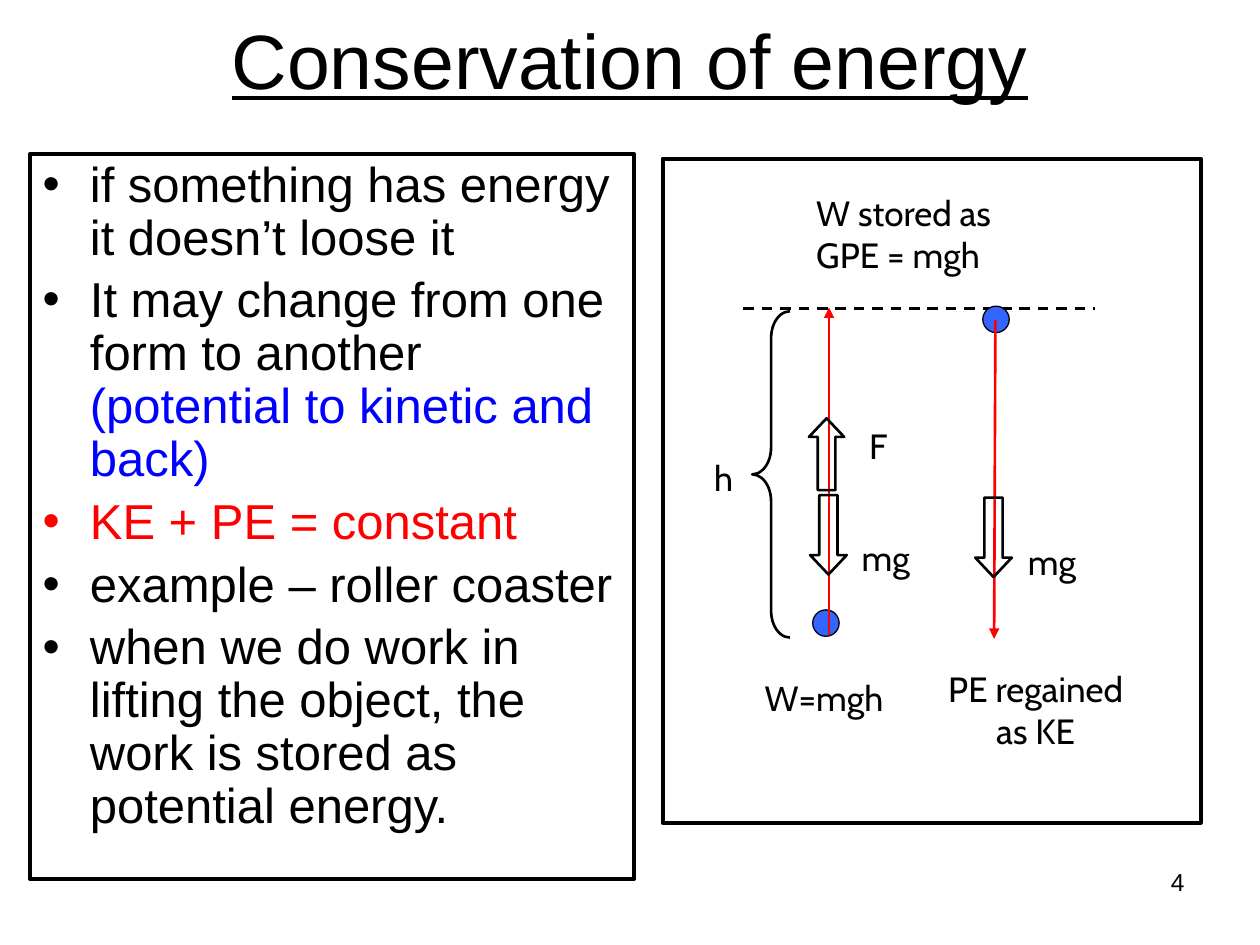
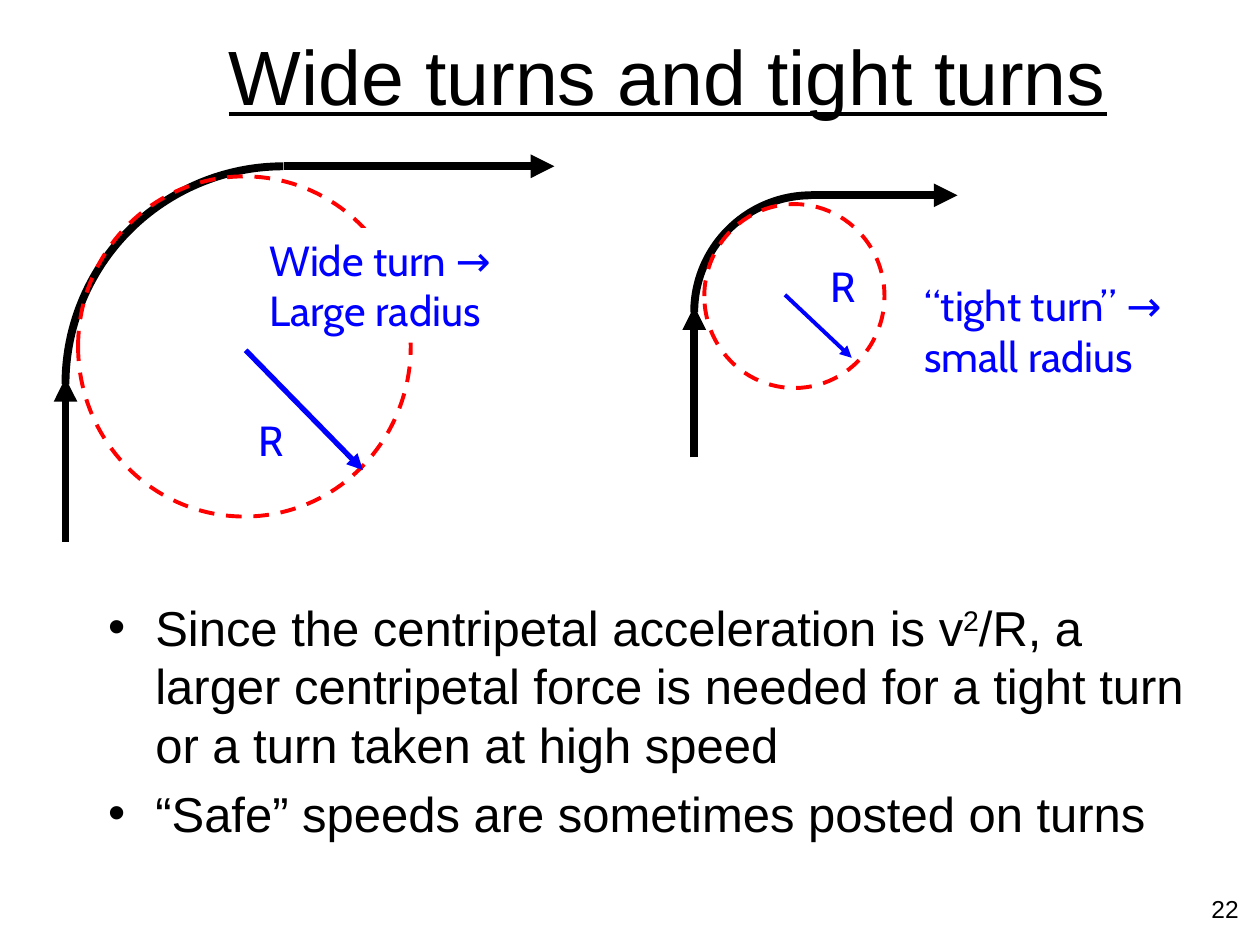
import dataclasses

import lxml.etree
import pptx
import pptx.dml.color
import pptx.enum.dml
import pptx.enum.shapes
import pptx.enum.text
import pptx.oxml.ns
import pptx.util

SHAPE = pptx.enum.shapes.MSO_SHAPE
ALIGN = pptx.enum.text.PP_ALIGN
COLUMNS, ROWS = 100, 75


@dataclasses.dataclass(frozen=True)
class Theme:
    black: str = "000000"
    white: str = "FFFFFF"
    blue: str = "0000FF"
    red: str = "FF0000"
    ball: str = "3366FF"
    main_font: str = "Arial"
    label_font: str = "Cabin"
    title_size: int = 44
    body_size: int = 28
    turn_size: int = 24
    label_size: int = 20
    number_size: int = 14
    frame_width: float = 2.25
    thin_width: float = 1.5
    ball_width: float = 0.75
    road_width: float = 4.5


THEME = Theme()


def add_xml(parent, tag, **attributes):
    return lxml.etree.SubElement(parent, pptx.oxml.ns.qn(tag), **attributes)


class SlideBuilder:
    """Draws on the current slide; places are columns and rows of the grid."""

    def __init__(self, deck, theme):
        self.deck = deck
        self.theme = theme
        self.column = deck.slide_width / COLUMNS
        self.row = deck.slide_height / ROWS
        self.slide = None

    def new_slide(self):
        self.slide = self.deck.slides.add_slide(self.deck.slide_layouts[6])

    def place(self, *lengths):
        """Turn alternating columns and rows into slide lengths."""
        units = (self.column, self.row) * 2
        return [round(length * unit) for length, unit in zip(lengths, units)]

    def color(self, value):
        return pptx.dml.color.RGBColor.from_string(value)

    def style_line(self, line, color, width, dashed=False):
        line.color.rgb = self.color(color)
        line.width = pptx.util.Pt(width)
        if dashed:
            line.dash_style = pptx.enum.dml.MSO_LINE.DASH

    def style_span(self, span, size, font, color):
        span.font.size = pptx.util.Pt(size)
        span.font.name = font
        span.font.color.rgb = self.color(color)

    def text(self, area, words, size, font, color=None, align=ALIGN.LEFT, wrap=True, fill=None):
        box = self.slide.shapes.add_textbox(*self.place(*area))
        frame = box.text_frame
        frame.word_wrap = wrap
        frame.text = words
        if fill:
            box.fill.solid()
            box.fill.fore_color.rgb = self.color(fill)
        for para in frame.paragraphs:
            para.alignment = align
            for span in para.runs:
                self.style_span(span, size, font, color or self.theme.black)
        return box

    def title(self, area, words):
        box = self.text(area, words, self.theme.title_size, self.theme.main_font, align=ALIGN.CENTER)
        box.text_frame.vertical_anchor = pptx.enum.text.MSO_ANCHOR.MIDDLE
        box.text_frame.paragraphs[0].runs[0].font.underline = True

    def number(self, area, words):
        self.text(area, words, self.theme.number_size, self.theme.main_font, align=ALIGN.RIGHT)

    def label(self, area, words, align=ALIGN.LEFT):
        self.text(area, words, self.theme.label_size, self.theme.label_font, align=align, wrap=False)

    def turn_label(self, area, words, fill=None):
        self.text(area, words, self.theme.turn_size, self.theme.label_font, self.theme.blue, fill=fill)

    def bullets(self, area, items, spacing=1.0, framed=False):
        """Each item is a list of (words, color, baseline in thousandths of a percent)."""
        theme = self.theme
        box = self.slide.shapes.add_textbox(*self.place(*area))
        if framed:
            self.style_line(box.line, theme.black, theme.frame_width)
        frame = box.text_frame
        frame.word_wrap = True
        for index, spans in enumerate(items):
            para = frame.add_paragraph() if index else frame.paragraphs[0]
            para.line_spacing = spacing
            para.space_before = pptx.util.Pt(0.2 * theme.body_size)
            properties = para._p.get_or_add_pPr()
            indent = round(3.75 * self.column)
            properties.set("marL", str(indent))
            properties.set("indent", str(-indent))
            add_xml(properties, "a:buFont", typeface=theme.main_font)
            add_xml(properties, "a:buChar", char="•")
            for words, color, baseline in spans:
                span = para.add_run()
                span.text = words
                self.style_span(span, theme.body_size, theme.main_font, color)
                if baseline:
                    span.font._element.set("baseline", str(baseline))

    def shape(self, kind, area, color, width, fill=None, dashed=False, adjustments=()):
        shape = self.slide.shapes.add_shape(kind, *self.place(*area))
        shape.shadow.inherit = False
        if fill:
            shape.fill.solid()
            shape.fill.fore_color.rgb = self.color(fill)
        else:
            shape.fill.background()
        self.style_line(shape.line, color, width, dashed)
        for index, value in enumerate(adjustments):
            shape.adjustments[index] = value

    def ball(self, left, top):
        self.shape(SHAPE.OVAL, (left, top, 2.1, 2.1), self.theme.black,
                   self.theme.ball_width, fill=self.theme.ball)

    def force(self, kind, area):
        self.shape(kind, area, self.theme.black, self.theme.thin_width, adjustments=(0.5, 0.53))

    def line(self, start, end, color, width, arrow=True, dashed=False):
        line = self.slide.shapes.add_connector(
            pptx.enum.shapes.MSO_CONNECTOR.STRAIGHT, *self.place(*start, *end))
        self.style_line(line.line, color, width, dashed)
        if arrow:
            add_xml(line.line._get_or_add_ln(), "a:tailEnd", type="triangle")
        add_xml(line._element.spPr, "a:effectLst")

    def road(self, left, top, radius, entry, leave):
        """Draw a road that comes up from row entry and bends right to column leave."""
        black, width = self.theme.black, self.theme.road_width
        half_turn, three_quarters = 108, 162
        self.shape(SHAPE.ARC, (left, top, 2 * radius, 2 * radius), black, width,
                   adjustments=(half_turn, three_quarters))
        self.line((left, entry), (left, top + radius - 0.5), black, width)
        self.line((left + radius, top), (leave, top), black, width)

    def turning_circle(self, area, center, rim, radius_width):
        self.shape(SHAPE.OVAL, area, self.theme.red, self.theme.frame_width, dashed=True)
        self.line(center, rim, self.theme.blue, radius_width)


def build_energy_slide(page):
    theme = page.theme
    black, red, thin = theme.black, theme.red, theme.thin_width
    page.new_slide()
    page.title((0, 0, 100, 9.4), "Conservation of energy")
    page.bullets((2.4, 12.2, 47.9, 57.6), [
        [("if something has energy it doesn’t loose it", black, 0)],
        [("It may change from one form to another ", black, 0),
         ("(potential to kinetic and back)", theme.blue, 0)],
        [("KE + PE = constant", red, 0)],
        [("example – roller coaster", black, 0)],
        [("when we do work in lifting the object, the work is stored as potential energy.", black, 0)],
    ], spacing=0.9, framed=True)

    page.ball(64.5, 48.4)
    page.line((65.8, 50.4), (65.8, 24.4), red, thin)
    page.force(SHAPE.DOWN_ARROW, (64.3, 39.3, 2.9, 6.3))
    page.shape(SHAPE.LEFT_BRACE, (59.7, 24.7, 3, 25.9), black, thin, adjustments=(0.71, 0.5))
    page.line((59, 24.5), (86.9, 24.5), black, thin, arrow=False, dashed=True)
    page.ball(78, 24.3)
    page.line((79, 25.4), (78.9, 50.7), red, thin)
    page.force(SHAPE.DOWN_ARROW, (77.4, 39.5, 2.9, 6.3))
    page.force(SHAPE.UP_ARROW, (64.2, 33.2, 2.8, 5.7))

    page.label((55.7, 35.7, 3.6, 4.3), "h")
    page.label((67.4, 42.1, 5.9, 4.3), "mg")
    page.label((59.7, 53.2, 11.9, 4.3), "W=mgh")
    page.label((63.8, 14.7, 16.6, 7.7), "W stored as\vGPE = mgh")
    page.label((80.6, 42.4, 5.9, 4.3), "mg")
    page.label((73.9, 52.5, 16.6, 7.7), "PE regained\vas KE", ALIGN.CENTER)
    page.label((68, 33.2, 3.5, 4.3), "F")
    page.shape(SHAPE.RECTANGLE, (52.6, 12.6, 42.7, 52.7), black, theme.frame_width)
    page.number((71.7, 68.3, 23.3, 5.2), "4")


def build_turns_slide(page):
    theme = page.theme
    black = theme.black
    page.new_slide()
    page.road(5.2, 13.2, 17.3, entry=43, leave=44)
    page.turning_circle((6.2, 14, 26.4, 27), (19.5, 27.8), (28.8, 37.3), 3)
    page.turn_label((20.4, 18.1, 21.2, 9.1), "Wide turn →\nLarge radius", fill=theme.white)
    page.road(55.1, 15.5, 9.3, entry=36.3, leave=76)
    page.turning_circle((55.9, 16.2, 14.3, 14.6), (62.3, 23.4), (67.6, 28.4), theme.frame_width)
    page.turn_label((72.4, 21.7, 25.6, 9.1), "“tight turn” →\vsmall radius")
    page.title((8, 1.4, 90, 9.1), "Wide turns and tight turns")
    page.bullets((7.6, 46.9, 90, 23), [
        [("Since the centripetal acceleration is v", black, 0), ("2", black, 30000),
         ("/R, a larger centripetal force is needed for a tight turn or a turn taken at high speed",
          black, 0)],
        [("“Safe” speeds are sometimes posted on turns", black, 0)],
    ])
    page.number((94.8, 70.5, 4.5, 3.6), "22")
    for left, top in ((19.5, 32.4), (64.9, 20.2)):
        page.turn_label((left, top, 4.1, 5.1), "R")


def main():
    deck = pptx.Presentation()
    deck.slide_width = pptx.util.Inches(10)
    deck.slide_height = pptx.util.Inches(7.5)
    page = SlideBuilder(deck, THEME)
    build_energy_slide(page)
    build_turns_slide(page)
    deck.save("out.pptx")


if __name__ == "__main__":
    main()
